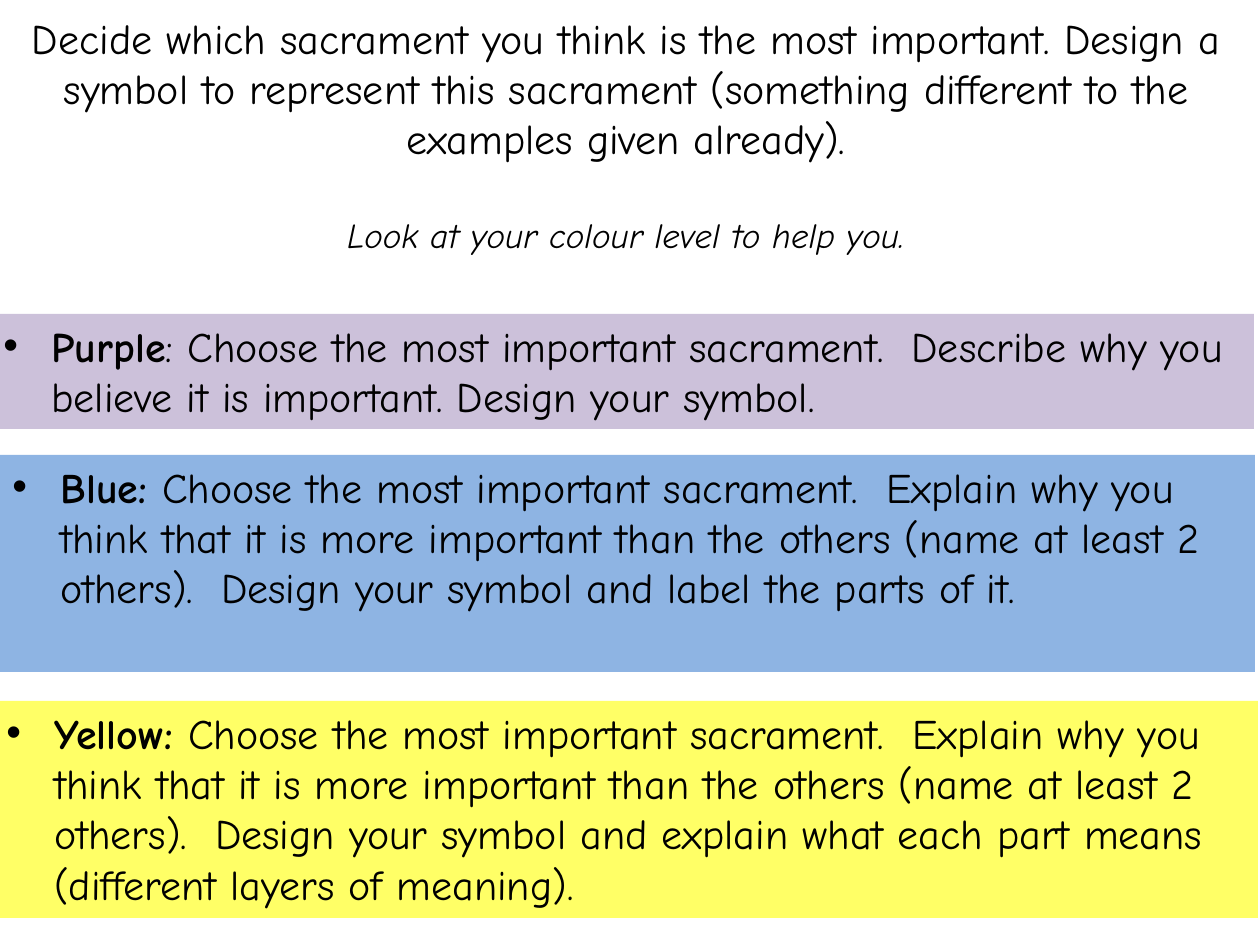
from pptx import Presentation
from pptx.dml.color import RGBColor
from pptx.enum.shapes import MSO_SHAPE as Shape
from pptx.enum.text import MSO_ANCHOR as Anchor, MSO_AUTO_SIZE as AutoSize, PP_ALIGN as Align
from pptx.oxml.ns import qn
from pptx.util import Pt
from lxml.etree import SubElement

EMU_PER_PX = 914400 / 126
FONT = "Comic Neue"
INDENT = 48

# Level name, task text, fill, and left, top, width, height in px
LEVELS = [
    ("Yellow: ",
     "Choose the most important sacrament.  Explain why you think that it is more "
     "important than the others (name at least 2 others).  Design your symbol and "
     "explain what each part means (different layers of meaning).",
     "FFFF66", (-6, 701, 1264, 217)),
    ("Purple",
     ": Choose the most important sacrament.  Describe why you believe it is "
     "important. Design your symbol.",
     "CCC1DA", (-9, 314, 1263, 115)),
    ("Blue: ",
     "Choose the most important sacrament.  Explain why you think that it is more "
     "important than the others (name at least 2 others).  Design your symbol and "
     "label the parts of it.",
     "8EB4E3", (0, 455, 1255, 217)),
]


def px(length):
    return round(length * EMU_PER_PX)


def colour(value):
    return RGBColor.from_string(value)


def add_text(para, text, size=24, bold=False, italic=False, fill="000000"):
    span = para.add_run()
    span.text = text
    span.font.name = FONT
    span.font.size = Pt(size)
    span.font.bold = bold
    span.font.italic = italic
    span.font.color.rgb = colour(fill)


def add_bullet(para):
    settings = para._p.get_or_add_pPr()
    settings.set("marL", str(px(INDENT)))
    settings.set("indent", str(-px(INDENT)))
    SubElement(settings, qn("a:buFont")).set("typeface", "Arial")
    SubElement(settings, qn("a:buChar")).set("char", "•")


def fill_title(page):
    title = page.shapes.title
    title.left, title.top, title.width, title.height = map(px, (-4, 55, 1260, 158))
    frame = title.text_frame
    frame.word_wrap = True
    frame.auto_size = AutoSize.NONE
    frame.vertical_anchor = Anchor.MIDDLE

    task = frame.paragraphs[0]
    add_text(task, "Decide which sacrament you think is the most important. Design a "
                   "symbol to represent this sacrament (something different to the "
                   "examples given already).")
    hint = frame.add_paragraph()
    hint.space_before = Pt(29)
    add_text(hint, "Look at your colour level to help you.", size=20, italic=True)
    for para in frame.paragraphs:
        para.alignment = Align.CENTER


def add_level(page, name, task, fill, place):
    box = page.shapes.add_shape(Shape.RECTANGLE, *map(px, place))
    box.shadow.inherit = False
    box.fill.solid()
    box.fill.fore_color.rgb = colour(fill)
    box.line.fill.background()

    frame = box.text_frame
    frame.word_wrap = True
    frame.vertical_anchor = Anchor.TOP
    para = frame.paragraphs[0]
    para.alignment = Align.LEFT
    add_bullet(para)
    add_text(para, name, bold=True)
    add_text(para, task)


def main():
    deck = Presentation()
    deck.slide_width, deck.slide_height = px(1260), px(945)
    page = deck.slides.add_slide(deck.slide_layouts[5])

    # Instruction at the top, then one band for each level
    fill_title(page)
    for level in LEVELS:
        add_level(page, *level)

    deck.save("out.pptx")


if __name__ == "__main__":
    main()
